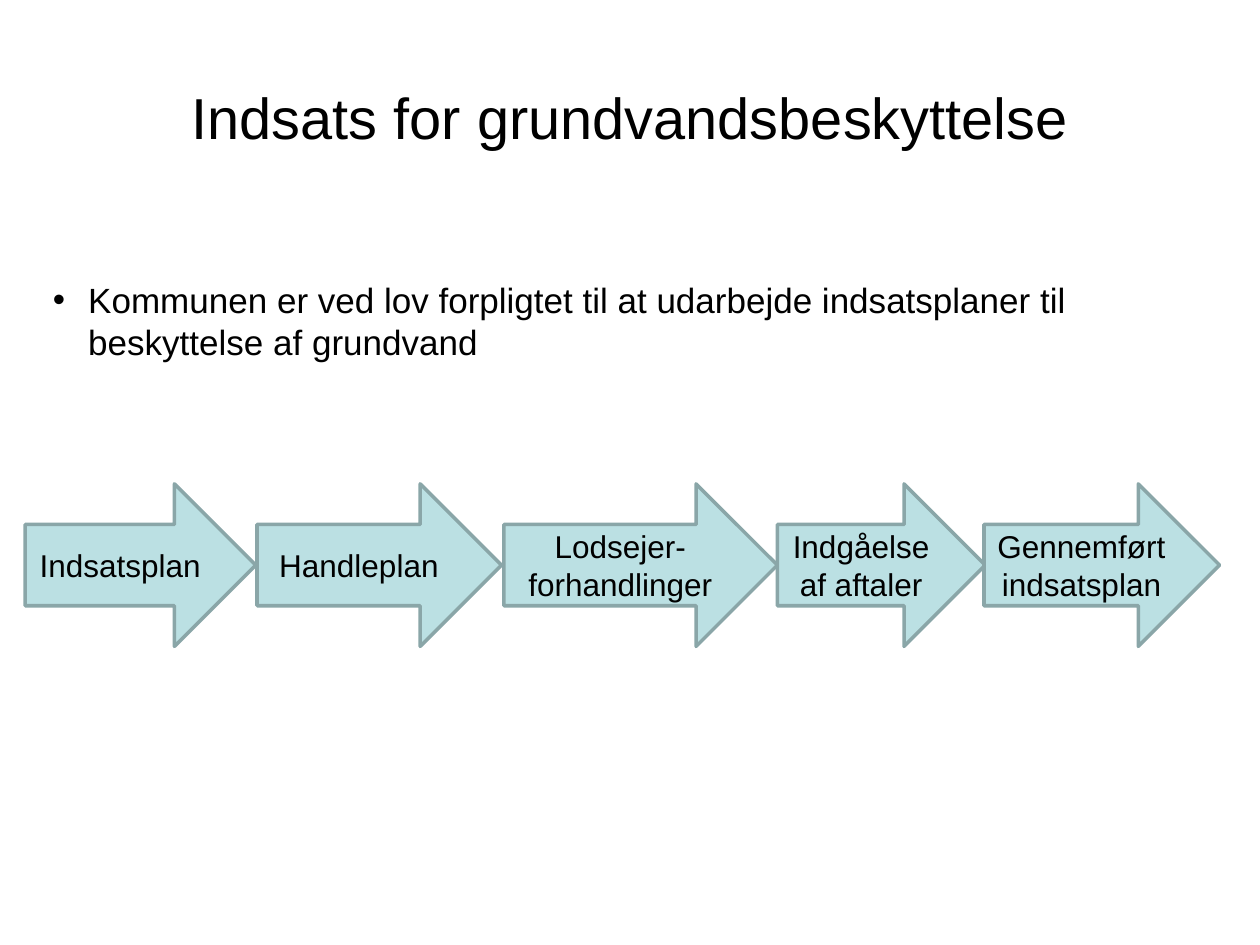
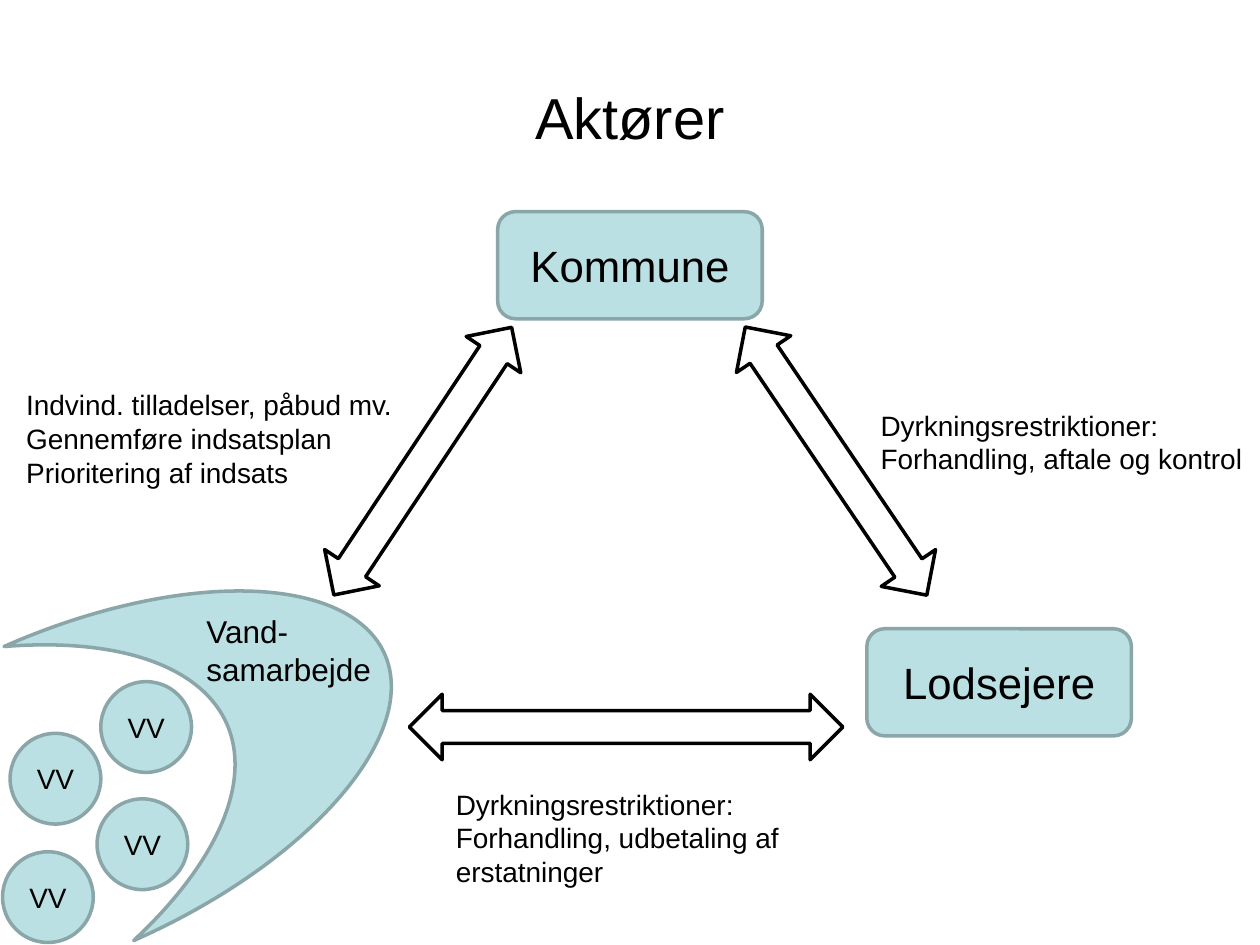
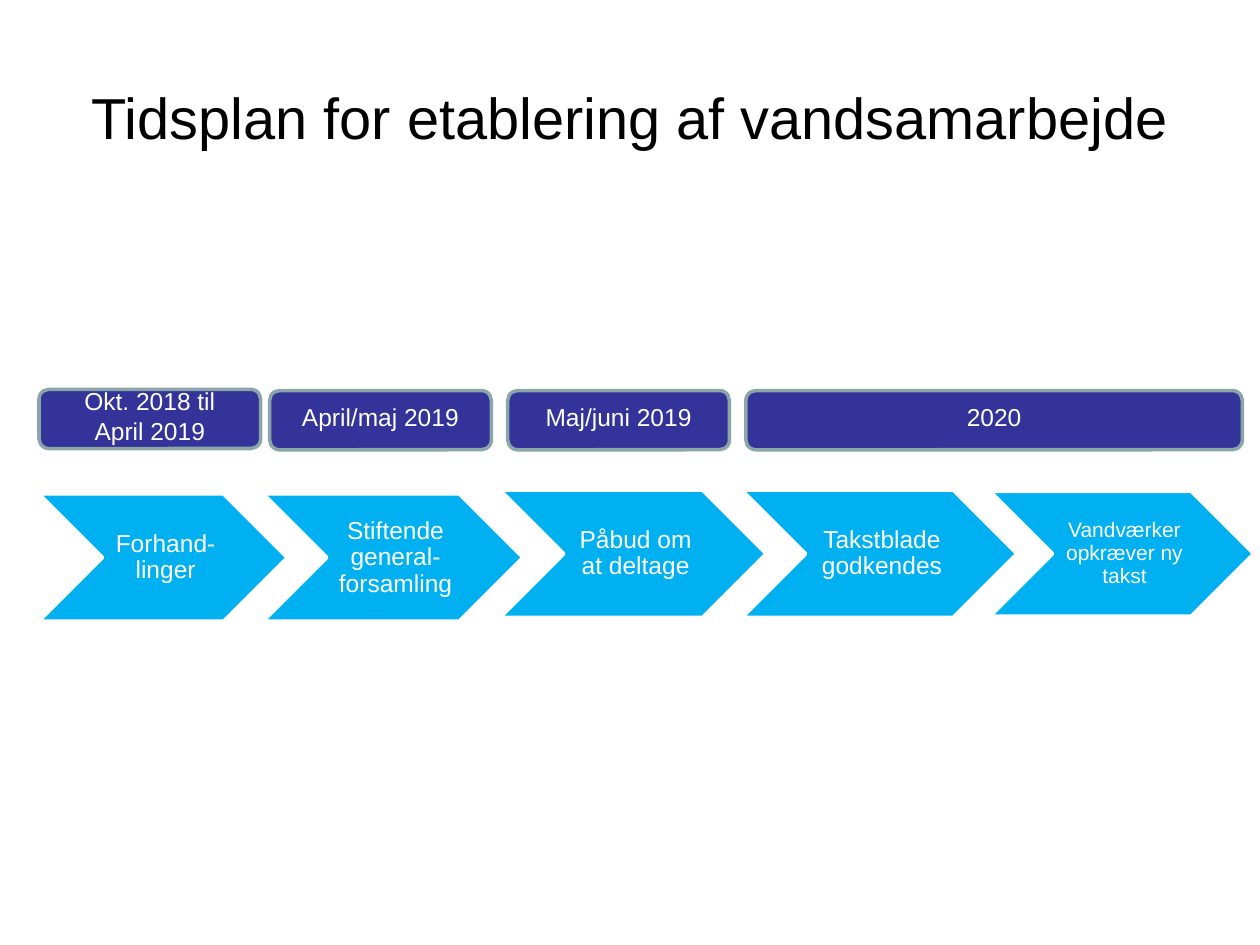
"""Build three slides on groundwater protection: process, actors and schedule."""
import pptx
import pptx.util
import pptx.dml.color
import pptx.enum.shapes
import pptx.enum.text

Inches = pptx.util.Inches
Pt = pptx.util.Pt
SHAPES = pptx.enum.shapes.MSO_SHAPE
ALIGN = pptx.enum.text.PP_ALIGN
ANCHOR = pptx.enum.text.MSO_ANCHOR

FONT = "Arial"
BLACK, WHITE = "000000", "FFFFFF"
PALE, GREY, NAVY, SKY = "BBE0E3", "8AA6A8", "333399", "00B0F0"
TITLE_BOX = (0.5, 0.3, 9, 1.25)
TITLE_ONLY, TITLE_AND_BODY = 5, 1

PROCESS_TITLE = "Indsats for grundvandsbeskyttelse"
DUTY = "Kommunen er ved lov forpligtet til at udarbejde indsatsplaner til beskyttelse af grundvand"
DUTY_BOX = (0.32, 2.16, 9.48, 4.54)
DUTY_INDENT = 0.28
STEP_TOP, STEP_HEIGHT = 3.84, 1.29
STEPS = [
    ("Indsatsplan", 0.2, 1.83),
    ("Handleplan", 2.04, 1.94),
    ("Lodsejer-forhandlinger", 4, 2.17),
    ("Indgåelse af aftaler", 6.17, 1.65),
    ("Gennemført indsatsplan", 7.81, 1.87),
]

ACTORS_TITLE = "Aktører"
ACTORS = [("Kommune", 3.95, 1.68), ("Lodsejere", 6.88, 4.99)]
ACTOR_SIZE = (2.1, 0.85)
WATERWORKS = [(0.08, 5.82), (0.8, 5.41), (0.77, 6.34), (0.02, 6.76)]
WATERWORKS_SIZE = (0.72, 0.72)
MOON_BOX, MOON_ROTATION = (0.43, 4.47, 2.74, 2.55), 336.2
RELATIONS = [
    ((5.35, 3.4, 2.57, 0.52), 55.9),
    ((3.25, 5.51, 3.44, 0.52), 0),
    ((2.08, 3.4, 2.55, 0.52), 123.6),
]
NOTES = [
    (["Dyrkningsrestriktioner:", "Forhandling, aftale og kontrol"],
     (6.89, 3.19, 3.11, 0.64), 16, False),
    (["Dyrkningsrestriktioner:", "Forhandling, udbetaling af erstatninger"],
     (3.52, 6.2, 3.17, 0.91), 16, True),
    (["Indvind. tilladelser, påbud mv.", "Gennemføre indsatsplan", "Prioritering af indsats"],
     (0.11, 3.03, 3.14, 0.91), 16, False),
    (["Vand-samarbejde"], (1.54, 4.81, 1.56, 0.71), 18, True),
]

SCHEDULE_TITLE = "Tidsplan for etablering af vandsamarbejde"
PERIOD_HEIGHT = 0.47
PERIODS = [
    (["Okt. 2018 til", "April 2019"], 0.31, 3.09, 1.76),
    (["April/maj 2019"], 2.14, 3.1, 1.76),
    (["Maj/juni 2019"], 4.03, 3.1, 1.76),
    (["2020"], 5.92, 3.1, 3.94),
]
MILESTONES = [
    ("Forhand-linger", (0.31, 3.92, 1.97, 1.01), 14),
    ("Stiftende general-forsamling", (2.09, 3.92, 2.06, 1.01), 14),
    ("Påbud om at deltage", (3.97, 3.89, 2.11, 1.01), 14),
    ("Takstblade godkendes", (5.89, 3.89, 2.18, 1.01), 14),
    ("Vandværker opkræver ny takst", (7.86, 3.9, 2.09, 0.99), 12),
]


def color(value):
    """Turn a hex string into a colour."""
    return pptx.dml.color.RGBColor.from_string(value)


def write(shape, lines, size=18, ink=BLACK, align=ALIGN.CENTER, anchor=ANCHOR.MIDDLE,
          wrap=True, insets=(0.1, 0.05, 0.1, 0.05), spacing=None):
    """Fill a shape with one paragraph per line."""
    frame = shape.text_frame
    frame.auto_size = pptx.enum.text.MSO_AUTO_SIZE.NONE
    frame.word_wrap = wrap
    frame.vertical_anchor = anchor
    (frame.margin_left, frame.margin_top,
     frame.margin_right, frame.margin_bottom) = map(Inches, insets)
    frame.text = "\n".join(lines)
    for paragraph in frame.paragraphs:
        paragraph.alignment = align
        paragraph.space_before = Pt(0)
        paragraph.line_spacing = spacing
        paragraph.font.name = FONT
        paragraph.font.size = Pt(size)
        paragraph.font.color.rgb = color(ink)


def place(shape, box):
    """Move and size a shape in inches."""
    shape.left, shape.top, shape.width, shape.height = map(Inches, box)


def add_shape(slide, kind, box, fill=PALE, line=GREY, rotation=0):
    """Add a preset shape with a two-point outline."""
    shape = slide.shapes.add_shape(kind, *map(Inches, box))
    shape.shadow.inherit = False
    shape.rotation = rotation
    if fill:
        shape.fill.solid()
        shape.fill.fore_color.rgb = color(fill)
    else:
        shape.fill.background()
    shape.line.color.rgb = color(line)
    shape.line.width = Pt(2)
    return shape


def add_slide(presentation, title, layout=TITLE_ONLY):
    """Add a slide with the shared title style."""
    slide = presentation.slides.add_slide(presentation.slide_layouts[layout])
    place(slide.shapes.title, TITLE_BOX)
    write(slide.shapes.title, [title], size=33)
    return slide


def build_process(presentation):
    """Show the duty and the steps of the plan."""
    slide = add_slide(presentation, PROCESS_TITLE, TITLE_AND_BODY)
    body = slide.placeholders[1]
    place(body, DUTY_BOX)
    write(body, [DUTY], size=20, align=ALIGN.LEFT, anchor=ANCHOR.TOP)
    properties = body.text_frame.paragraphs[0]._p.get_or_add_pPr()
    properties.set("marL", str(Inches(DUTY_INDENT)))
    properties.set("indent", str(-Inches(DUTY_INDENT)))
    for label, left, width in STEPS:
        step = add_shape(slide, SHAPES.RIGHT_ARROW, (left, STEP_TOP, width, STEP_HEIGHT))
        write(step, [label])


def build_actors(presentation):
    """Show the actors and how they relate."""
    slide = add_slide(presentation, ACTORS_TITLE)
    for label, left, top in ACTORS:
        actor = add_shape(slide, SHAPES.ROUNDED_RECTANGLE, (left, top, *ACTOR_SIZE))
        write(actor, [label], size=25)
    for position in WATERWORKS:
        waterworks = add_shape(slide, SHAPES.OVAL, position + WATERWORKS_SIZE)
        write(waterworks, ["VV"], size=16, insets=(0.05,) * 4)
    moon = add_shape(slide, SHAPES.MOON, MOON_BOX, rotation=MOON_ROTATION)
    moon._element.spPr.xfrm.set("flipH", "1")
    for box, rotation in RELATIONS:
        add_shape(slide, SHAPES.LEFT_RIGHT_ARROW, box, None, BLACK, rotation)
    for lines, box, size, wrap in NOTES:
        note = slide.shapes.add_textbox(*map(Inches, box))
        write(note, lines, size=size, align=ALIGN.LEFT, anchor=ANCHOR.TOP, wrap=wrap)


def build_schedule(presentation):
    """Show the milestones under their periods."""
    slide = add_slide(presentation, SCHEDULE_TITLE)
    for label, box, size in MILESTONES:
        milestone = add_shape(slide, SHAPES.CHEVRON, box, SKY, WHITE)
        write(milestone, [label], size=size, ink=WHITE, spacing=0.9,
              insets=(0.06, 0.02, 0.02, 0.02))
    for lines, left, top, width in PERIODS:
        period = add_shape(slide, SHAPES.ROUNDED_RECTANGLE,
                           (left, top, width, PERIOD_HEIGHT), NAVY)
        write(period, lines, size=14, ink=WHITE, insets=(0.1, 0.05, 0.1, 0.1))


def main():
    """Build and save the presentation."""
    presentation = pptx.Presentation()
    presentation.slide_width, presentation.slide_height = Inches(10), Inches(7.5)
    build_process(presentation)
    build_actors(presentation)
    build_schedule(presentation)
    presentation.save("out.pptx")


if __name__ == "__main__":
    main()
